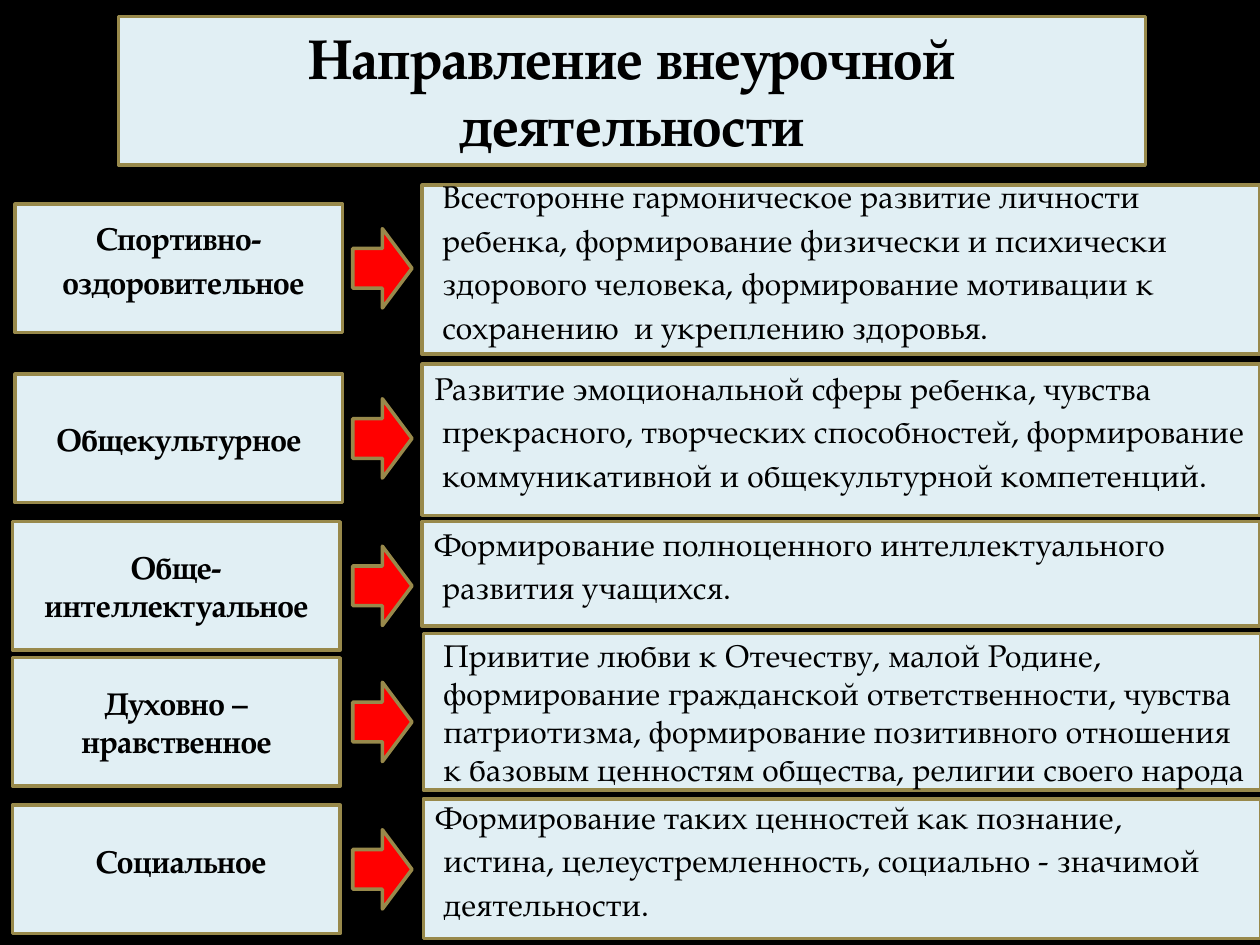
from pptx import Presentation
from pptx.dml.color import RGBColor
from pptx.enum.shapes import MSO_SHAPE
from pptx.enum.text import MSO_ANCHOR, MSO_AUTO_SIZE, PP_ALIGN
from pptx.util import Inches, Pt

BLACK = RGBColor(0x00, 0x00, 0x00)
PALE_BLUE = RGBColor(0xE1, 0xEF, 0xF4)
OLIVE = RGBColor(0x98, 0x89, 0x4B)
RED = RGBColor(0xFF, 0x00, 0x00)
FONT = "TeX Gyre Pagella"

LABEL_WIDTH, LABEL_HEIGHT = 2.6, 1.02
ARROW_LEFT, ARROW_WIDTH, ARROW_HEIGHT = 2.8, 0.47, 0.63
GOAL_WIDTH = 6.65
TIGHT, TIGHTER, LOOSE, SINGLE = Pt(12.1), Pt(11.9), 1.15, None


def paint(shape, color):
    shape.fill.solid()
    shape.fill.fore_color.rgb = color
    shape.line.color.rgb = OLIVE
    shape.line.width = Pt(2)


def write(shape, lines, align, size=18, bold=False):
    """Fill a shape with (text, left indent in inches, line spacing) paragraphs."""
    frame = shape.text_frame
    frame_format = {"word_wrap": True, "auto_size": MSO_AUTO_SIZE.NONE,
                    "vertical_anchor": MSO_ANCHOR.MIDDLE}
    for name, value in frame_format.items():
        setattr(frame, name, value)
    for index, (text, indent, spacing) in enumerate(lines):
        para = frame.add_paragraph() if index else frame.paragraphs[0]
        para.alignment = align
        para.line_spacing = spacing
        if indent:
            para._p.get_or_add_pPr().set("marL", str(Inches(indent)))
        span = para.add_run()
        span.text = text
        span.font.color.rgb = BLACK
        font_format = {"name": FONT, "size": Pt(size), "bold": bold}
        for name, value in font_format.items():
            setattr(span.font, name, value)


# Each direction: label left, label top, label lines,
# goal left, goal top, goal height, goal lines
DIRECTIONS = [
    (0.12, 1.62, [("Спортивно-", 0, TIGHT), ("оздоровительное", 0.07, LOOSE)],
     3.35, 1.47, 1.34,
     [("Всесторонне гармоническое развитие личности", 0.06, TIGHT),
      ("ребенка, формирование физически и психически здорового человека, "
       "формирование мотивации к сохранению  и укреплению здоровья.", 0.06, LOOSE)]),
    (0.12, 2.97, [("Общекультурное", 0, SINGLE)],
     3.35, 2.89, 1.2,
     [("Развитие эмоциональной сферы ребенка, чувства", 0, TIGHTER),
      ("прекрасного, творческих способностей, формирование "
       "коммуникативной и общекультурной компетенций.", 0.06, LOOSE)]),
    (0.1, 4.14, [("Обще-интеллектуальное", 0, SINGLE)],
     3.35, 4.14, 0.83,
     [("Формирование полноценного интеллектуального", 0, TIGHTER),
      ("развития учащихся.", 0.06, LOOSE)]),
    (0.1, 5.22, [("Духовно – нравственное", 0, SINGLE)],
     3.36, 5.03, 1.24,
     [("Привитие любви к Отечеству, малой Родине,", 0.06, SINGLE),
      ("формирование гражданской ответственности, чувства патриотизма, "
       "формирование позитивного отношения к базовым ценностям общества, "
       "религии своего народа", 0.06, SINGLE)]),
    (0.1, 6.39, [("Социальное", 0.07, TIGHTER)],
     3.36, 6.34, 1.11,
     [("Формирование таких ценностей как познание,", 0, TIGHTER),
      ("истина, целеустремленность, социально - значимой", 0.06, LOOSE),
      ("деятельности.", 0.06, LOOSE)]),
]

deck = Presentation()
deck.slide_width, deck.slide_height = Inches(10), Inches(7.5)
page = deck.slides.add_slide(deck.slide_layouts[5])
page.background.fill.solid()
page.background.fill.fore_color.rgb = BLACK

title = page.shapes.title
title_place = {"left": 0.94, "top": 0.13, "width": 8.15, "height": 1.18}
for name, value in title_place.items():
    setattr(title, name, Inches(value))
paint(title, PALE_BLUE)
write(title, [("Направление внеурочной деятельности", 0, SINGLE)],
      PP_ALIGN.CENTER, size=32, bold=True)

for (label_left, label_top, label_lines,
     goal_left, goal_top, goal_height, goal_lines) in DIRECTIONS:
    arrow_top = label_top + (LABEL_HEIGHT - ARROW_HEIGHT) / 2
    parts = [
        (MSO_SHAPE.RECTANGLE, PALE_BLUE, label_lines, PP_ALIGN.CENTER, True,
         (label_left, label_top, LABEL_WIDTH, LABEL_HEIGHT)),
        (MSO_SHAPE.RIGHT_ARROW, RED, [], None, False,
         (ARROW_LEFT, arrow_top, ARROW_WIDTH, ARROW_HEIGHT)),
        (MSO_SHAPE.RECTANGLE, PALE_BLUE, goal_lines, PP_ALIGN.LEFT, False,
         (goal_left, goal_top, GOAL_WIDTH, goal_height)),
    ]
    for kind, color, lines, align, bold, place in parts:
        box = page.shapes.add_shape(kind, *map(Inches, place))
        box.shadow.inherit = False
        paint(box, color)
        write(box, lines, align, bold=bold)

deck.save("out.pptx")
